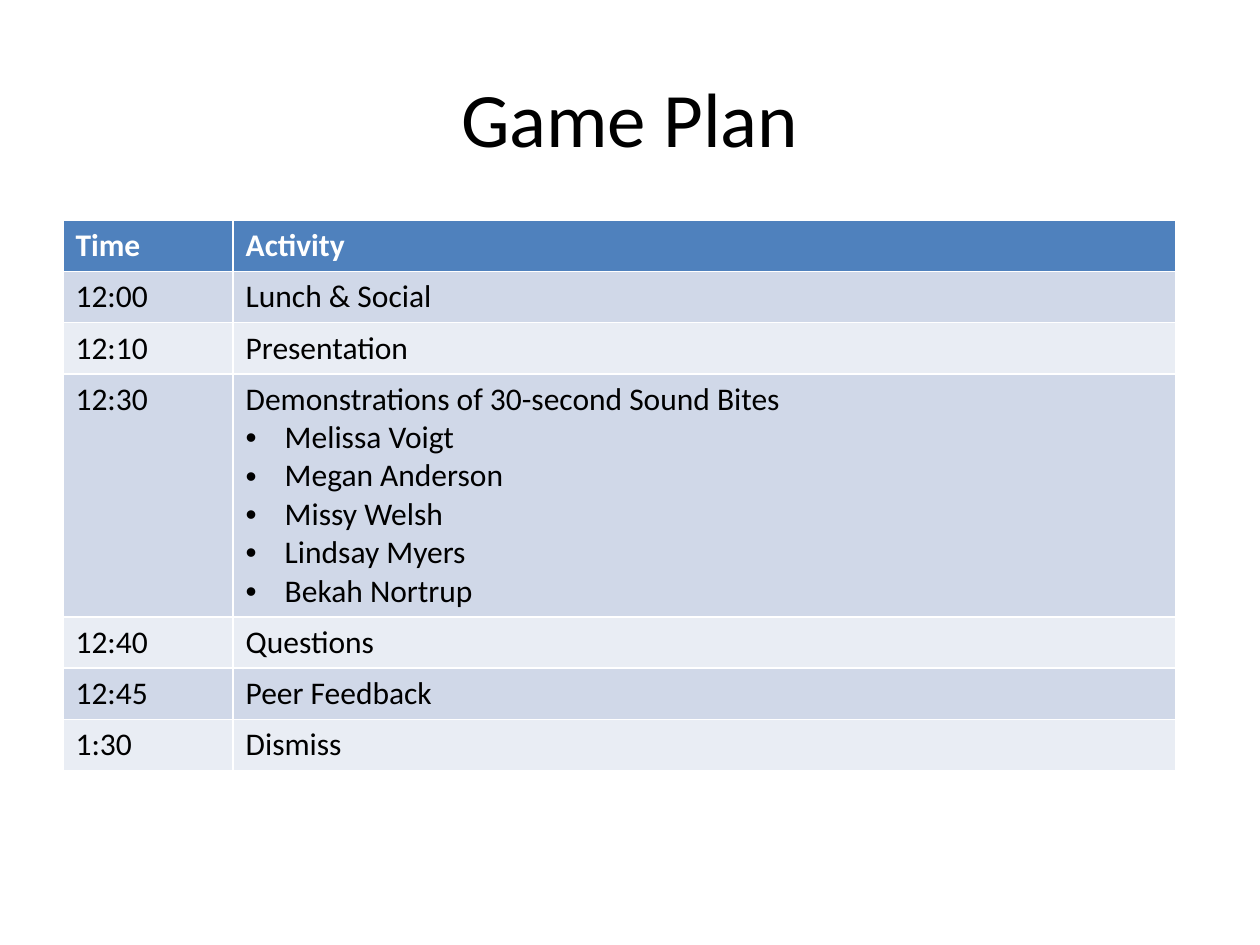
"""Build the Game Plan slide with its timetable."""
from lxml.etree import SubElement as Sub
from pptx import Presentation as Deck
from pptx.dml.color import RGBColor as Rgb
from pptx.enum.text import MSO_ANCHOR as Anchor, PP_ALIGN as Align
from pptx.oxml.ns import qn
from pptx.util import Inches, Pt

HUES = {"head": "4F81BD", "odd": "D0D8E8", "even": "E9EDF4",
        "light": "FFFFFF", "dark": "000000"}
FONT = "Calibri"
ROWS = [
    ("Time", ["Activity"]),
    ("12:00", ["Lunch & Social"]),
    ("12:10", ["Presentation"]),
    ("12:30", ["Demonstrations of 30-second Sound Bites", "Melissa Voigt",
               "Megan Anderson", "Missy Welsh", "Lindsay Myers",
               "Bekah Nortrup"]),
    ("12:40", ["Questions"]),
    ("12:45", ["Peer Feedback"]),
    ("1:30", ["Dismiss"]),
]


def style(para, size, hue, bold=False):
    font = para.font
    font.name, font.size, font.bold = FONT, Pt(size), bold
    font.color.rgb = Rgb.from_string(HUES[hue])


def bullet(para):
    props = para._p.get_or_add_pPr()
    props.set("marL", str(Inches(0.31)))
    props.set("indent", str(-Inches(0.31)))
    Sub(props, qn("a:buFont"), typeface="Arial")
    Sub(props, qn("a:buChar"), char="•")


deck = Deck()
deck.slide_width, deck.slide_height = Inches(10), Inches(7.5)
wide, high = deck.slide_width, deck.slide_height
slide = deck.slides.add_slide(deck.slide_layouts[5])

title = slide.shapes.title
title.left, title.top = int(wide * 0.05), int(high * 0.04)
title.width, title.height = int(wide * 0.9), Inches(1.25)
title.text_frame.text = "Game Plan"
title.text_frame.vertical_anchor = Anchor.MIDDLE
head = title.text_frame.paragraphs[0]
head.alignment = Align.CENTER
style(head, 44, "dark")

cols = [Inches(1.35), Inches(7.48)]
line, tall = int(high * 0.054), int(high * 0.256)
frame = slide.shapes.add_table(len(ROWS), len(cols), int(wide * 0.05),
                               Inches(1.75), sum(cols),
                               line * (len(ROWS) - 1) + tall)
table = frame.table
for col, width in zip(table.columns, cols):
    col.width = width

for row, (time, lines) in enumerate(ROWS):
    table.rows[row].height = tall if len(lines) > 1 else line
    fill = "head" if row == 0 else "odd" if row % 2 else "even"
    ink = "dark" if row else "light"
    for col, texts in enumerate(([time], lines)):
        cell = table.cell(row, col)
        cell.fill.solid()
        cell.fill.fore_color.rgb = Rgb.from_string(HUES[fill])
        cell.text = "\n".join(texts)
        for spot, para in enumerate(cell.text_frame.paragraphs):
            style(para, 18, ink, row == 0)
            if spot:
                bullet(para)
            for run in para.runs:
                run.font.size = Pt(18)
                run.font.bold = row == 0
                run.font.name = FONT
                run.font.color.rgb = Rgb.from_string(HUES[ink])

deck.save("out.pptx")
